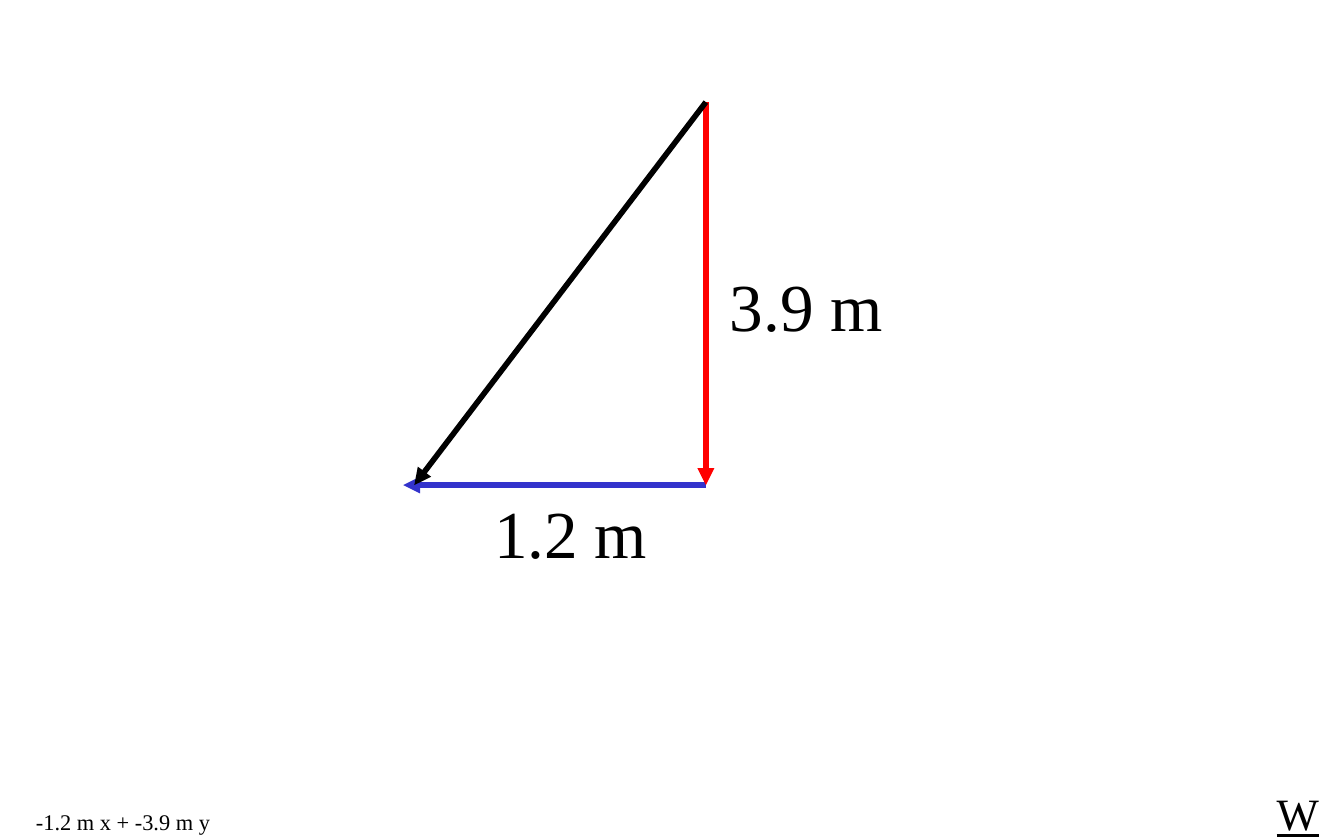
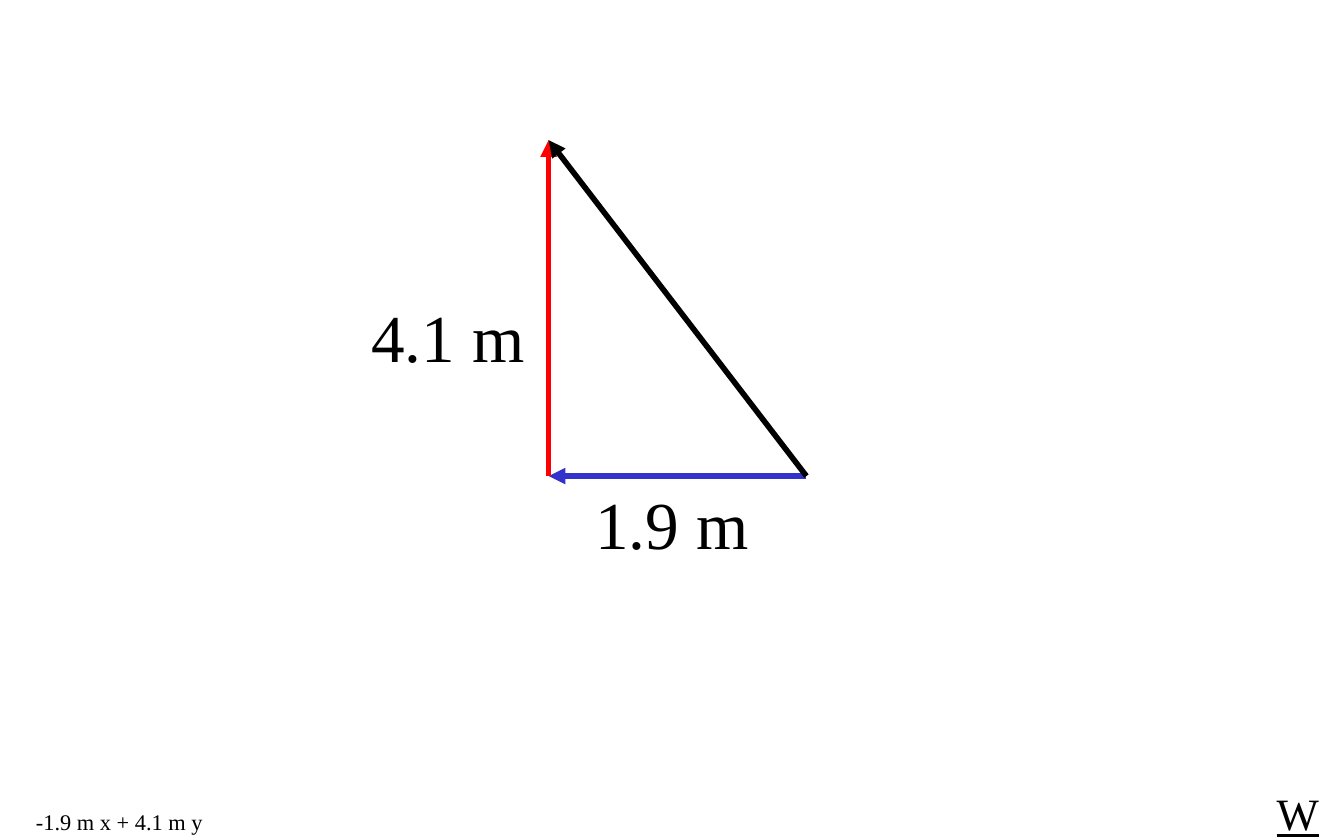
"""Build two slides of vector components with their resultants."""
from lxml import etree
from pptx import Presentation
from pptx.dml.color import RGBColor
from pptx.enum import shapes, text
from pptx.oxml.ns import qn
from pptx.util import Cm, Pt

COLORS = {"x": "3333CC", "y": "FF0000", "resultant": "000000", "text": "000000"}
FONT = "Times New Roman"


def add_label(s, words, left, top, width, height, size, underline=None):
    tf = s.shapes.add_textbox(Cm(left), Cm(top), Cm(width), Cm(height)).text_frame
    tf.word_wrap = False
    tf.auto_size = text.MSO_AUTO_SIZE.SHAPE_TO_FIT_TEXT
    r = tf.paragraphs[0].add_run()
    r.text = words
    r.font.name = FONT
    r.font.size = Pt(size)
    r.font.underline = underline
    r.font.color.rgb = RGBColor.from_string(COLORS["text"])


def add_arrow(s, start, end, color):
    points = [Cm(v) for v in (*start, *end)]
    sp = s.shapes.add_connector(shapes.MSO_CONNECTOR.STRAIGHT, *points)
    sp.line.width = Pt(3)
    sp.line.color.rgb = RGBColor.from_string(color)
    etree.SubElement(sp.line._get_or_add_ln(), qn("a:tailEnd"), type="triangle")
    etree.SubElement(sp._element.spPr, qn("a:effectLst"))


prs = Presentation()
prs.slide_width, prs.slide_height = Cm(25.4), Cm(15.88)

vectors = [
    {
        "sum": ("-1.2 m x + -3.9 m y", 3.86),
        "labels": [("1.2 m", 9.09, 9.17), ("3.9 m", 13.54, 4.88)],
        "arrows": {
            "x": ((13.34, 9.17), (7.62, 9.17)),
            "y": ((13.34, 1.93), (13.34, 9.17)),
            "resultant": ((13.34, 1.93), (7.83, 9.17)),
        },
    },
    {
        "sum": ("-1.9 m x + 4.1 m y", 3.71),
        "labels": [("1.9 m", 11, 9), ("4.1 m", 6.77, 5.46)],
        "arrows": {
            "x": ((15.24, 9), (10.37, 9)),
            "y": ((10.37, 9), (10.37, 2.65)),
            "resultant": ((15.24, 9), (10.37, 2.65)),
        },
    },
]

for vector in vectors:
    s = prs.slides.add_slide(prs.slide_layouts[6])
    words, width = vector["sum"]
    add_label(s, words, 0.43, 15.16, width, 0.76, 12)
    add_label(s, "W", 23.88, 14.73, 1.32, 1.27, 24, underline=True)
    for words, left, top in vector["labels"]:
        add_label(s, words, left, top, 3.43, 1.8, 36)
    for name, (start, end) in vector["arrows"].items():
        add_arrow(s, start, end, COLORS[name])

prs.save("out.pptx")
